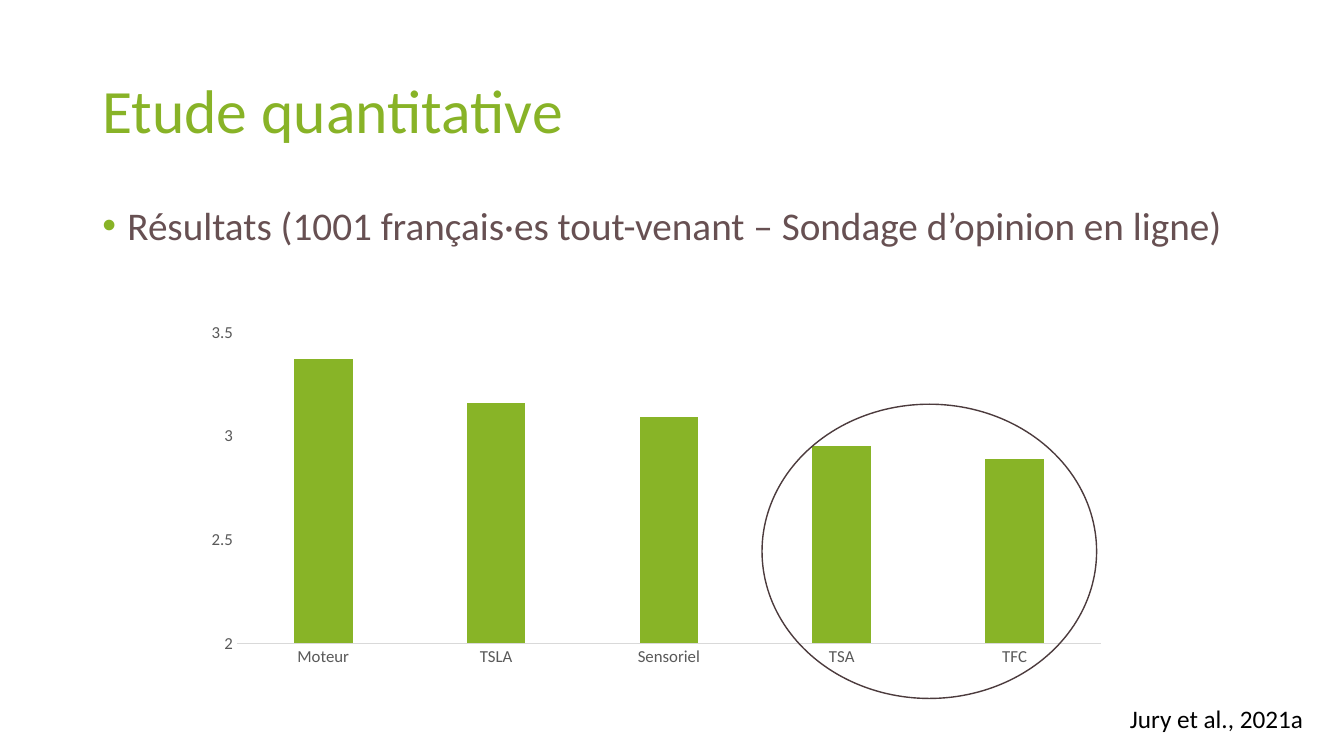
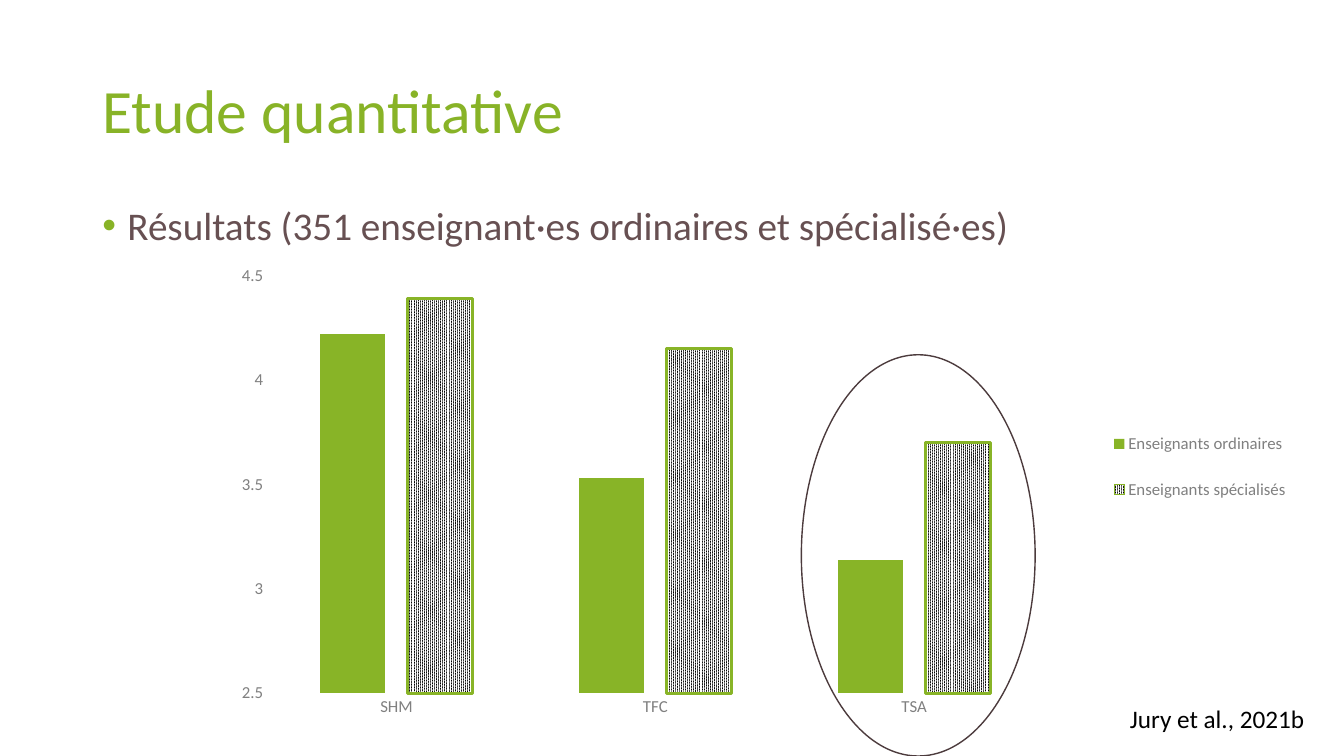
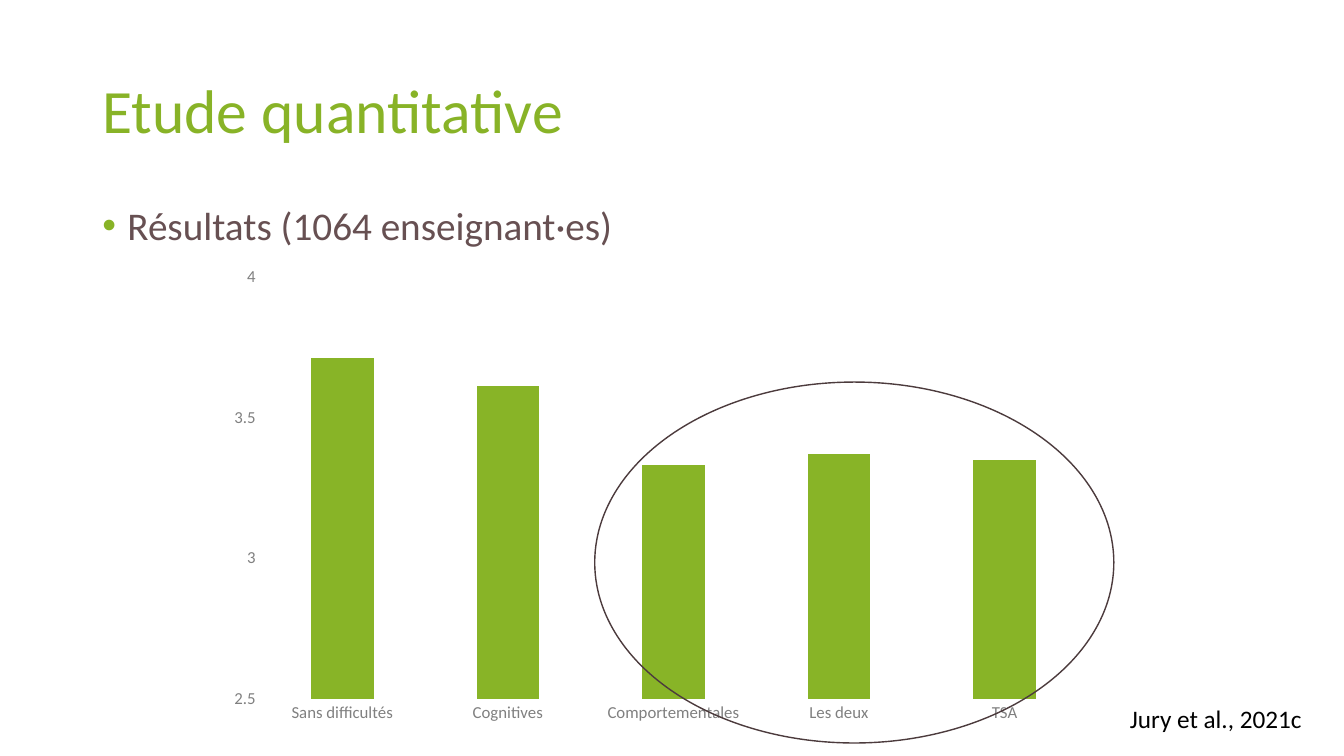
"""Build three slides of survey results, each with a column chart."""
from dataclasses import dataclass

from lxml.etree import SubElement
from pptx import Presentation
from pptx.chart.data import CategoryChartData as Data
from pptx.dml.color import RGBColor as RGB
from pptx.enum.chart import XL_CHART_TYPE as Kind
from pptx.enum.chart import XL_LEGEND_POSITION as Place
from pptx.enum.chart import XL_TICK_MARK as Tick
from pptx.enum.dml import MSO_PATTERN as Pattern
from pptx.enum.shapes import MSO_SHAPE as Shape
from pptx.enum.text import MSO_ANCHOR as Anchor
from pptx.enum.text import MSO_AUTO_SIZE as Fit
from pptx.oxml import parse_xml
from pptx.oxml.ns import nsdecls, qn
from pptx.util import Pt


@dataclass(frozen=True)
class Theme:
    font: str = "Calibri"
    green: str = "88B327"
    bar: str = "88B427"
    body: str = "675052"
    ring: str = "4C3B3D"
    rule: str = "D9D9D9"
    black: str = "000000"
    white: str = "FFFFFF"
    big: int = 44
    mid: int = 28
    cite: int = 18
    small: int = 12


@dataclass(frozen=True)
class Study:
    lead: str
    cite: str
    cats: tuple
    rows: dict
    box: tuple
    ring: tuple
    inner: tuple
    low: float
    high: float
    gap: int = 164
    lap: int = -35
    grey: str = "808080"
    line: bool = False
    key: tuple = ()


THEME = Theme()
PAGE = (960, 540)
TITLE = "Etude quantitative"
HEAD = (66, 28.75, 828, 104.4)
BODY = (66, 143.75, 828, 342.6)
CITE = (800, 499, 140, 29)

STUDIES = (
    Study(
        lead="Résultats (1001 français·es tout-venant – Sondage d’opinion en ligne)",
        cite="Jury et al., 2021a",
        cats=("Moteur", "TSLA", "Sensoriel", "TSA", "TFC"),
        rows={"Series 1": (3.37, 3.16, 3.09, 2.95, 2.89)},
        box=(136, 187.2, 663.8, 296),
        ring=(544.3, 288.7, 239, 210.2),
        inner=(0.05, 0.02, 0.93, 0.9),
        low=2, high=3.8, gap=195, lap=-13, grey="595959", line=True,
    ),
    Study(
        lead="Résultats (351 enseignant·es ordinaires et spécialisé·es)",
        cite="Jury et al., 2021b",
        cats=("SHM", "TFC", "TSA"),
        rows={
            "Enseignants ordinaires": (4.22, 3.53, 3.14),
            "Enseignants spécialisés": (4.39, 4.15, 3.7),
        },
        box=(160, 153.4, 770.4, 363.6),
        ring=(572.4, 253.4, 167, 286.6),
        inner=(0.04, 0.12, 0.72, 0.82),
        low=2.5, high=4.5, key=(0.82, 0.38, 0.17, 0.23),
    ),
    Study(
        lead="Résultats (1064 enseignant·es)",
        cite="Jury et al., 2021c",
        cats=("Sans difficultés", "Cognitives", "Comportementales", "Les deux", "TSA"),
        rows={"Series 1": (3.71, 3.61, 3.33, 3.37, 3.35)},
        box=(160, 153.4, 635.8, 367.9),
        ring=(424.8, 272.9, 370.8, 257.8),
        inner=(0.04, 0.12, 0.93, 0.82),
        low=2.5, high=4,
    ),
)


def points(box):
    """Turn a box of numbers into lengths."""
    return [Pt(side) for side in box]


def style(font, size, tint):
    """Set the face, size and colour of a font."""
    font.name = THEME.font
    font.size = Pt(size)
    font.color.rgb = RGB.from_string(tint)


def write(slide, box, text, size, tint):
    """Place one line of text and return its frame."""
    frame = slide.shapes.add_textbox(*points(box)).text_frame
    frame.word_wrap = True
    frame.text = text
    style(frame.paragraphs[0].runs[0].font, size, tint)
    return frame


def head(slide, box):
    """Place the slide title."""
    frame = write(slide, box, TITLE, THEME.big, THEME.green)
    frame.vertical_anchor = Anchor.MIDDLE
    frame.paragraphs[0].line_spacing = 0.9


def lead(slide, box, text):
    """Place the bulleted line."""
    para = write(slide, box, text, THEME.mid, THEME.body).paragraphs[0]
    props = para._p.get_or_add_pPr()
    props.set("marL", str(Pt(18)))
    props.set("indent", str(-Pt(18)))
    tint = SubElement(props, qn("a:buClr"))
    SubElement(tint, qn("a:srgbClr"), val=THEME.green)
    SubElement(props, qn("a:buFont"), typeface="Arial")
    SubElement(props, qn("a:buChar"), char="•")
    para.line_spacing = 0.9


def cite(slide, box, text):
    """Place the citation."""
    frame = write(slide, box, text, THEME.cite, THEME.black)
    frame.word_wrap = False
    frame.auto_size = Fit.SHAPE_TO_FIT_TEXT


def ring(slide, box):
    """Draw the ellipse around the bars of interest."""
    oval = slide.shapes.add_shape(Shape.OVAL, *points(box))
    oval.shadow.inherit = False
    oval.fill.background()
    oval.line.color.rgb = RGB.from_string(THEME.ring)
    oval.line.width = Pt(1)


def layout(node, index, area, inner=False):
    """Fix the area of a chart part as shares of the chart."""
    for old in node.findall(qn("c:layout")):
        node.remove(old)
    pairs = [("layoutTarget", "inner")] if inner else []
    pairs += [("xMode", "edge"), ("yMode", "edge"), *zip("xywh", area)]
    parts = "".join(f'<c:{tag} val="{val}"/>' for tag, val in pairs)
    node.insert(index, parse_xml(
        f'<c:layout {nsdecls("c")}><c:manualLayout>{parts}</c:manualLayout></c:layout>'))


def axes(chart, study):
    """Format both axes."""
    for axis in (chart.category_axis, chart.value_axis):
        axis.has_major_gridlines = False
        axis.major_tick_mark = axis.minor_tick_mark = Tick.NONE
        style(axis.tick_labels.font, THEME.small, study.grey)
        axis.format.line.fill.background()
    if study.line:
        line = chart.category_axis.format.line
        line.color.rgb = RGB.from_string(THEME.rule)
        line.width = Pt(0.75)
    scale = chart.value_axis
    scale.minimum_scale = study.low
    scale.maximum_scale = study.high
    scale.major_unit = 0.5


def bars(plot, study):
    """Format the columns: the first series plain, the next dotted."""
    plot.gap_width = study.gap
    plot.overlap = study.lap
    plot.vary_by_categories = False
    for index, row in enumerate(plot.series):
        row.invert_if_negative = False
        fill = row.format.fill
        if index:
            fill.patterned()
            fill.pattern = Pattern.PERCENT_90
            fill.fore_color.rgb = RGB.from_string(THEME.white)
            fill.back_color.rgb = RGB.from_string(THEME.black)
            row.format.line.color.rgb = RGB.from_string(THEME.bar)
            row.format.line.width = Pt(2)
        else:
            fill.solid()
            fill.fore_color.rgb = RGB.from_string(THEME.bar)


def graph(slide, box, study):
    """Place the column chart and its legend, if any."""
    data = Data()
    data.categories = study.cats
    for name, vals in study.rows.items():
        data.add_series(name, vals)
    chart = slide.shapes.add_chart(Kind.COLUMN_CLUSTERED, *points(box), data).chart
    style(chart.font, 10, THEME.black)
    chart.has_title = False
    axes(chart, study)
    bars(chart.plots[0], study)
    layout(chart._chartSpace.chart.plotArea, 0, study.inner, inner=True)
    chart.has_legend = bool(study.key)
    if study.key:
        legend = chart.legend
        legend.position = Place.TOP
        legend.include_in_layout = False
        style(legend.font, THEME.small, study.grey)
        layout(legend._element, 1, study.key)


def page(deck, study):
    """Add the slide of one study."""
    slide = deck.slides.add_slide(deck.slide_layouts[6])
    head(slide, HEAD)
    lead(slide, BODY, study.lead)
    graph(slide, study.box, study)
    ring(slide, study.ring)
    cite(slide, CITE, study.cite)


def main():
    """Build and save the deck."""
    deck = Presentation()
    deck.slide_width, deck.slide_height = points(PAGE)
    for study in STUDIES:
        page(deck, study)
    deck.save("out.pptx")


if __name__ == "__main__":
    main()
